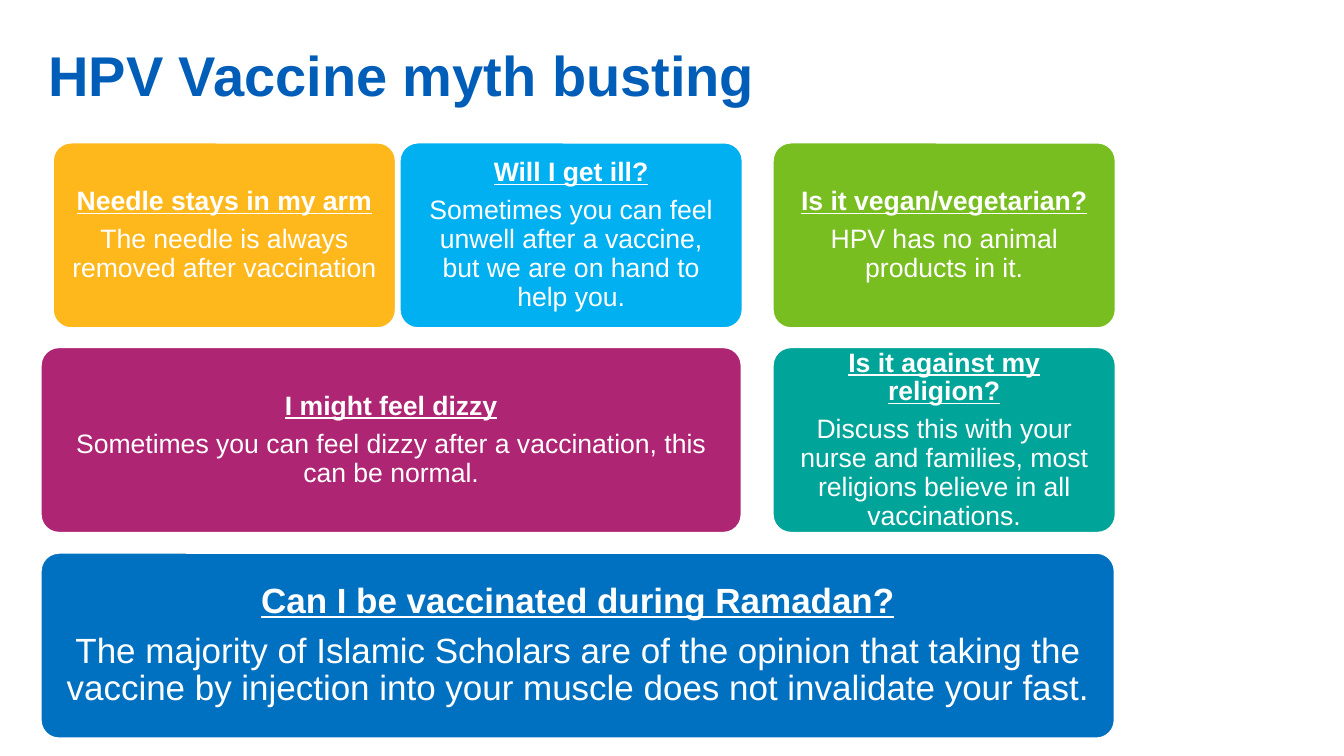
from pptx import Presentation
from pptx.dml.color import RGBColor
from pptx.enum.shapes import MSO_SHAPE
from pptx.enum.text import MSO_ANCHOR, MSO_AUTO_SIZE, PP_ALIGN
from pptx.util import Emu, Pt

ROUNDED = MSO_SHAPE.ROUNDED_RECTANGLE
TOP, MIDDLE = MSO_ANCHOR.TOP, MSO_ANCHOR.MIDDLE
LEFT, CENTER = PP_ALIGN.LEFT, PP_ALIGN.CENTER
NO_FIT = MSO_AUTO_SIZE.NONE

EMU_PER_PX = 9144  # 100 px to the inch
FONT = "Arial"

WHITE = RGBColor(0xFF, 0xFF, 0xFF)
TITLE_BLUE = RGBColor(0x00, 0x5E, 0xB8)
YELLOW = RGBColor(0xFF, 0xB8, 0x1C)
SKY = RGBColor(0x00, 0xB0, 0xF0)
GREEN = RGBColor(0x78, 0xBE, 0x20)
PLUM = RGBColor(0xAE, 0x25, 0x73)
TEAL = RGBColor(0x00, 0xA4, 0x99)
BLUE = RGBColor(0x00, 0x70, 0xC0)

ROW_TOPS = (141, 344, 548)
CARD_WIDTH, CARD_HEIGHT = 341, 185
SMALL_TEXT, LARGE_TEXT = 19, 25

# row, left, width, colour, text size, inset, myth, answer
CARDS = (
    (2, 40, 1066, BLUE, LARGE_TEXT, 15, "Can I be vaccinated during Ramadan?",
     "The majority of Islamic Scholars are of the opinion that taking the "
     "vaccine by injection into your muscle does not invalidate your fast."),
    (1, 40, 696, PLUM, SMALL_TEXT, 13, "I might feel dizzy",
     "Sometimes you can feel dizzy after a vaccination, this can be normal."),
    (0, 52, CARD_WIDTH, YELLOW, SMALL_TEXT, 13, "Needle stays in my arm",
     "The needle is always removed after vaccination"),
    (0, 396, CARD_WIDTH, SKY, SMALL_TEXT, 13, "Will I get ill?",
     "Sometimes you can feel unwell after a vaccine, but we are on hand to help you."),
    (1, 766, CARD_WIDTH, TEAL, SMALL_TEXT, 13, "Is it against my religion?",
     "Discuss this with your nurse and families, most religions believe in all vaccinations."),
    (0, 766, CARD_WIDTH, GREEN, SMALL_TEXT, 13, "Is it vegan/vegetarian?",
     "HPV has no animal products in it."),
)


def px(value):
    return Emu(value * EMU_PER_PX)


def set_attributes(target, values):
    for name, value in values.items():
        setattr(target, name, value)


def format_frame(frame, anchor, inset, top_inset):
    set_attributes(frame, {
        "word_wrap": True, "auto_size": NO_FIT, "vertical_anchor": anchor,
        "margin_left": px(inset), "margin_right": px(inset),
        "margin_top": px(top_inset), "margin_bottom": px(inset)})


def write_paragraph(paragraph, text, size, color, spacing, **font_values):
    paragraph.text = text
    set_attributes(paragraph, spacing)
    set_attributes(paragraph.font, {"name": FONT, "size": Pt(size), **font_values})
    paragraph.font.color.rgb = color


def add_title(slide, text):
    title = slide.shapes.title
    set_attributes(title, {"left": px(38), "top": px(29),
                           "width": px(945), "height": px(71)})
    format_frame(title.text_frame, TOP, 10, 11)
    write_paragraph(title.text_frame.paragraphs[0], text, 40, TITLE_BLUE,
                    {"alignment": LEFT, "line_spacing": 1.0, "space_before": Pt(0)},
                    bold=True)


def add_card(slide, row, left, width, color, size, inset, myth, answer):
    card = slide.shapes.add_shape(ROUNDED, px(left), px(ROW_TOPS[row]),
                                  px(width), px(CARD_HEIGHT))
    card.adjustments[0] = 0.1
    card.shadow.inherit = False
    card.fill.solid()
    card.fill.fore_color.rgb = color
    card.line.color.rgb = WHITE
    card.line.width = Pt(2)

    frame = card.text_frame
    format_frame(frame, MIDDLE, inset, inset)
    spacing = {"alignment": CENTER, "line_spacing": 0.9, "space_after": Pt(size * 0.35)}
    write_paragraph(frame.paragraphs[0], myth, size, WHITE, spacing,
                    bold=True, underline=True)
    write_paragraph(frame.add_paragraph(), answer, size, WHITE, spacing)


def main():
    presentation = Presentation()
    presentation.slide_width = px(1333)
    presentation.slide_height = px(750)
    title_only = presentation.slide_layouts[5]
    slide = presentation.slides.add_slide(title_only)
    add_title(slide, "HPV Vaccine myth busting")
    for card in CARDS:
        add_card(slide, *card)
    presentation.save("out.pptx")


if __name__ == "__main__":
    main()
